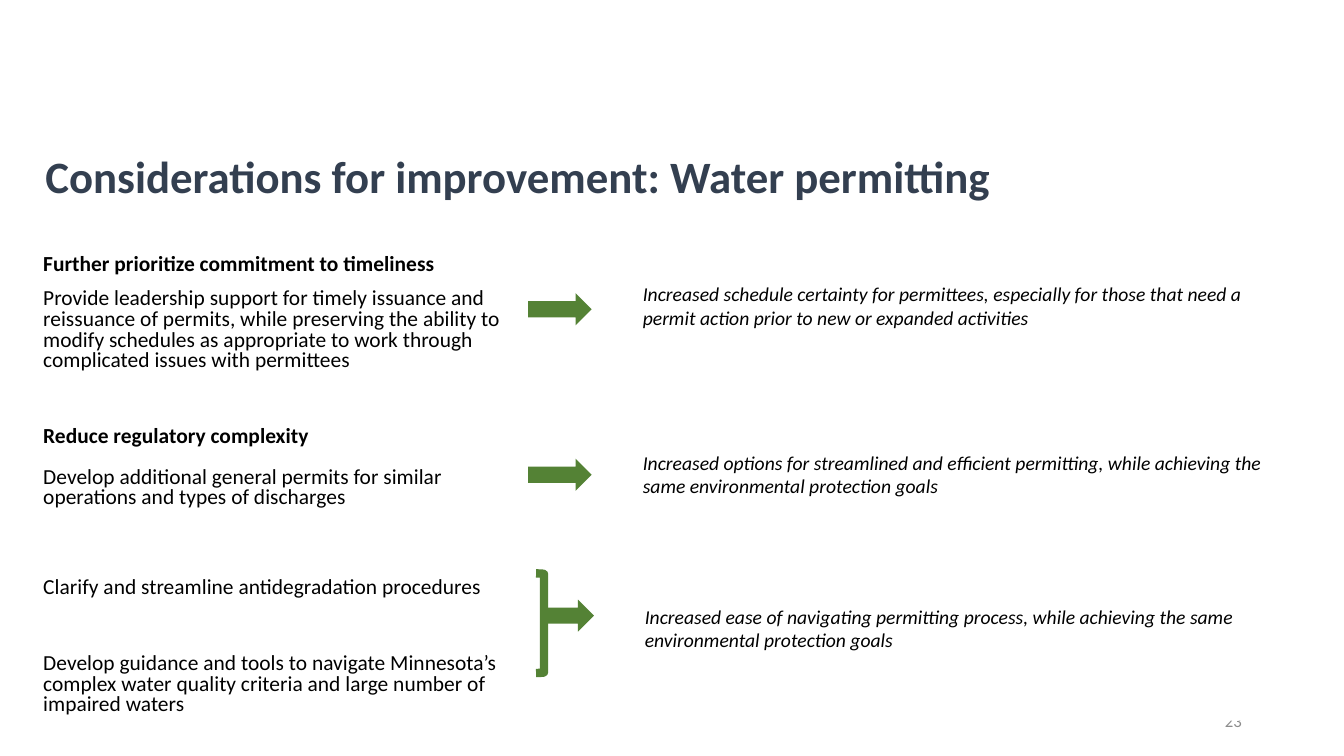
from pptx import Presentation
from pptx import util as u
from pptx.dml.color import RGBColor
from pptx.enum import shapes, text

NAVY = RGBColor(0x33, 0x3F, 0x50)
BLACK = RGBColor(0, 0, 0)
GRAY = RGBColor(0x8C, 0x8C, 0x8C)
GREEN = RGBColor(0x54, 0x82, 0x35)
WHITE = RGBColor(0xFF, 0xFF, 0xFF)


def add_run(paragraph, words, size, color, bold=False, italic=False):
    run = paragraph.add_run()
    run.text = words
    run.font.name = "Calibri"
    run.font.size = u.Pt(size)
    run.font.color.rgb = color
    run.font.bold = bold
    run.font.italic = italic


def add_plain_shape(kind, left, top, width, height, fill=None):
    shape = slide.shapes.add_shape(kind, u.Cm(left), u.Cm(top), u.Cm(width), u.Cm(height))
    shape.shadow.inherit = False
    if fill is None:
        shape.fill.background()
    else:
        shape.fill.solid()
        shape.fill.fore_color.rgb = fill
        shape.line.fill.background()
    return shape


presentation = Presentation()
presentation.slide_width = u.Cm(33.87)
presentation.slide_height = u.Cm(19.05)
slide = presentation.slides.add_slide(presentation.slide_layouts[5])

title = slide.shapes.title
title.left, title.top, title.width, title.height = u.Cm(0.89), u.Cm(3.53), u.Cm(29.21), u.Cm(1.96)
title.text_frame.auto_size = text.MSO_AUTO_SIZE.NONE
title.text_frame.vertical_anchor = text.MSO_ANCHOR.MIDDLE
paragraph = title.text_frame.paragraphs[0]
paragraph.alignment = text.PP_ALIGN.LEFT
paragraph.line_spacing = 0.9
add_run(paragraph, "Considerations for improvement: Water permitting", 32, NAVY, bold=True)

number = slide.shapes.add_textbox(u.Cm(23.93), u.Cm(17.65), u.Cm(7.62), u.Cm(1.02))
number.text_frame.word_wrap = True
number.text_frame.vertical_anchor = text.MSO_ANCHOR.MIDDLE
paragraph = number.text_frame.paragraphs[0]
paragraph.alignment = text.PP_ALIGN.RIGHT
add_run(paragraph, "23", 12, GRAY)

considerations = [
    ("Further prioritize commitment to timeliness", True, 0),
    ("Provide leadership support for timely issuance and reissuance of permits, while preserving "
     "the ability to modify schedules as appropriate to work through complicated issues with "
     "permittees", False, 10),
    ("Reduce regulatory complexity", True, 39.5),
    ("Develop additional general permits for similar operations and types of discharges", False, 14.5),
    ("Clarify and streamline antidegradation procedures", False, 49.5),
    ("Develop guidance and tools to navigate Minnesota’s complex water quality criteria and "
     "large number of impaired waters", False, 39.5),
]
body = slide.shapes.add_textbox(u.Cm(0.84), u.Cm(6.3), u.Cm(12.09), u.Cm(11.86))
body.text_frame.word_wrap = True
for index, (words, bold, space) in enumerate(considerations):
    paragraph = body.text_frame.add_paragraph() if index else body.text_frame.paragraphs[0]
    paragraph.line_spacing = 0.8
    paragraph.space_before = u.Pt(space)
    add_run(paragraph, words, 15.3, BLACK, bold=bold)

add_plain_shape(shapes.MSO_SHAPE.RECTANGLE, 29.67, 14.38, 4.2, 3.78, WHITE)

for left, top, width in [(13.31, 7.39, 1.6), (13.31, 11.56, 1.6), (13.67, 15.11, 1.3)]:
    add_plain_shape(shapes.MSO_SHAPE.RIGHT_ARROW, left, top, width, 0.81, GREEN)

bracket = add_plain_shape(shapes.MSO_SHAPE.RIGHT_BRACKET, 13.51, 14.45, 0.2, 2.51)
bracket.line.color.rgb = GREEN
bracket.line.width = u.Pt(6)

outcomes = [
    (15.95, 6.99, "Increased schedule certainty for permittees, especially for those that need a "
     "permit action prior to new or expanded activities"),
    (15.95, 11.23, "Increased options for streamlined and efficient permitting, while achieving the "
     "same environmental protection goals"),
    (16, 15.11, "Increased ease of navigating permitting process, while achieving the same "
     "environmental protection goals"),
]
for left, top, words in outcomes:
    outcome = slide.shapes.add_textbox(u.Cm(left), u.Cm(top), u.Cm(16.64), u.Cm(1.45))
    outcome.text_frame.word_wrap = True
    add_run(outcome.text_frame.paragraphs[0], words, 14, BLACK, italic=True)

presentation.save("out.pptx")
